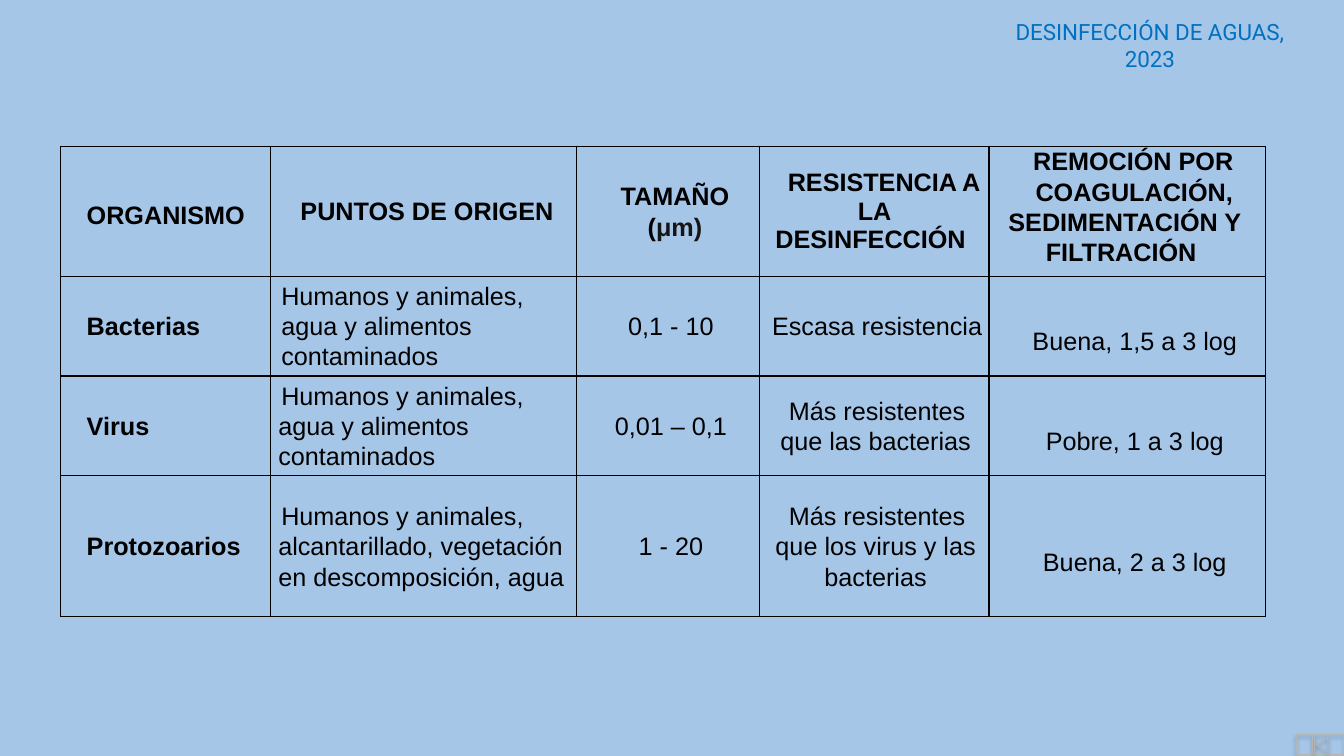
"""Build the slide that compares how organisms respond to water disinfection."""
import pptx
import pptx.dml.color
import pptx.enum.shapes
import pptx.enum.text
import pptx.oxml
import pptx.oxml.ns
import pptx.util

Inches = pptx.util.Inches
Pt = pptx.util.Pt
RGBColor = pptx.dml.color.RGBColor
ALIGN = pptx.enum.text.PP_ALIGN
ANCHOR = pptx.enum.text.MSO_ANCHOR

BACKGROUND = RGBColor(0xA6, 0xC6, 0xE8)
TITLE_BLUE = RGBColor(0x00, 0x70, 0xC0)
BLACK = RGBColor(0x00, 0x00, 0x00)
UNIT_BLACK = RGBColor(0x15, 0x15, 0x15)
BUTTON_GRAY = RGBColor(0xB5, 0xB5, 0xB5)

TITLE = "DESINFECCIÓN DE AGUAS, 2023"
HEADERS = [
    [[("ORGANISMO", BLACK)]],
    [[("PUNTOS DE ORIGEN ", BLACK)]],
    [[("TAMAÑO", BLACK)], [("(", BLACK), ("μm)", UNIT_BLACK)]],
    [[("RESISTENCIA A LA DESINFECCIÓN ", BLACK)]],
    [[("REMOCIÓN POR ", BLACK)], [("COAGULACIÓN, SEDIMENTACIÓN Y FILTRACIÓN ", BLACK)]],
]
ORGANISMS = [
    ("Bacterias", "Humanos y animales, agua y alimentos contaminados", "0,1 - 10",
     "Escasa resistencia", "Buena, 1,5 a 3 log "),
    ("Virus", "Humanos y animales, agua y alimentos contaminados", "0,01 – 0,1",
     "Más resistentes que las bacterias", "Pobre, 1 a 3 log "),
    ("Protozoarios", "Humanos y animales, alcantarillado, vegetación en descomposición, agua",
     "1 - 20", "Más resistentes que los virus y las bacterias", "Buena, 2 a 3 log "),
]
COLUMN_WIDTHS = [2.08, 3.04, 1.81, 2.28, 2.74]
ROW_HEIGHTS = [1.29, 0.99, 0.99, 1.4]
HEADER_INDENTS = [[(0.07, 0.19)], [(0, 0.19)], [(0, 0.19)] * 2, [(0.05, 0.19)],
                  [(0.05, 0.19), (0, 0.19)]]
BODY_INDENTS = [(0.07, 0.19), (0.08, 0.03), (0.08, 0.03), (0.08, 0.03), (0.08, 0.19)]
BACTERIA_INDENTS = [(0.07, 0.19), (0.11, 0), (0.11, 0), (0.08, 0.03), (0.08, 0.19)]
NAMESPACE = pptx.oxml.ns.nsdecls("a")


def write_text(paragraph, text, *, size=18, font="Arial", color=BLACK, bold=False,
               align=ALIGN.CENTER, indent=(0, 0), spacing=1.07, after=0.2):
    """Add one formatted run to a paragraph."""
    properties = paragraph._p.get_or_add_pPr()
    properties.set("marL", str(Inches(indent[0])))
    properties.set("indent", str(Inches(indent[1])))
    paragraph.alignment = align
    paragraph.line_spacing = spacing
    paragraph.space_after = Pt(after)
    run = paragraph.add_run()
    run.text = text
    run.font.name = font
    run.font.size = Pt(size)
    run.font.bold = bold
    run.font.color.rgb = color


def format_cell(cell, *, top=0, anchor=ANCHOR.MIDDLE):
    """Set the borders, insets and anchor of a table cell."""
    properties = cell._tc.get_or_add_tcPr()
    for side in "LRTB":
        properties.append(pptx.oxml.parse_xml(
            f'<a:ln{side} {NAMESPACE} w="{Pt(1)}"><a:solidFill>'
            f'<a:srgbClr val="{BLACK}"/></a:solidFill></a:ln{side}>'))
    cell.fill.background()
    cell.margin_left = cell.margin_bottom = 0
    cell.margin_right = Inches(0.05)
    cell.margin_top = Inches(top)
    cell.vertical_anchor = anchor


def add_title(slide):
    """Place the heading in the top right corner."""
    title = slide.shapes.title
    title.left, title.top = Inches(9.82), Inches(0.13)
    title.width, title.height = Inches(3.17), Inches(0.37)
    frame = title.text_frame
    frame.word_wrap = True
    frame.auto_size = pptx.enum.text.MSO_AUTO_SIZE.SHAPE_TO_FIT_TEXT
    frame.vertical_anchor = ANCHOR.TOP
    write_text(frame.paragraphs[0], TITLE, size=16, font="Roboto", color=TITLE_BLUE,
               spacing=1.0, after=0)


def add_organism_table(slide):
    """Add the table of organisms."""
    table = slide.shapes.add_table(
        len(ROW_HEIGHTS), len(COLUMN_WIDTHS), Inches(0.6), Inches(1.45),
        Inches(sum(COLUMN_WIDTHS)), Inches(sum(ROW_HEIGHTS))).table
    table.first_row = table.horz_banding = False
    for column, width in zip(table.columns, COLUMN_WIDTHS):
        column.width = Inches(width)
    for row, height in zip(table.rows, ROW_HEIGHTS):
        row.height = Inches(height)

    last = len(COLUMN_WIDTHS) - 1
    for column, (lines, indents) in enumerate(zip(HEADERS, HEADER_INDENTS)):
        cell = table.cell(0, column)
        format_cell(cell, top=0.07 if column == 0 else 0,
                    anchor=ANCHOR.TOP if column == last else ANCHOR.MIDDLE)
        for number, (line, indent) in enumerate(zip(lines, indents)):
            frame = cell.text_frame
            paragraph = frame.add_paragraph() if number else frame.paragraphs[0]
            for text, color in line:
                write_text(paragraph, text, color=color, bold=True, indent=indent,
                           align=ALIGN.LEFT if column == 0 else ALIGN.CENTER,
                           spacing=1.02 if column == 3 else 1.07)

    for row, organism in enumerate(ORGANISMS, start=1):
        indents = BACTERIA_INDENTS if row == 1 else BODY_INDENTS
        for column, (text, indent) in enumerate(zip(organism, indents)):
            cell = table.cell(row, column)
            format_cell(cell, top=0.3 if column == last else 0)
            write_text(cell.text_frame.paragraphs[0], text, bold=column == 0, indent=indent,
                       align=ALIGN.LEFT if column < 2 else ALIGN.CENTER)


def add_back_button(slide):
    """Add the outlined navigation button in the bottom right corner."""
    button = slide.shapes.add_shape(
        pptx.enum.shapes.MSO_SHAPE.ACTION_BUTTON_BEGINNING,
        Inches(12.86), Inches(7.29), Inches(0.47), Inches(0.2))
    button.fill.background()
    button.line.color.rgb = BUTTON_GRAY
    button.line.width = Pt(0.75)
    button.shadow.inherit = False
    effects = button._element.spPr.find(pptx.oxml.ns.qn("a:effectLst"))
    effects.append(pptx.oxml.parse_xml(
        f'<a:outerShdw {NAMESPACE} blurRad="{Pt(3.1)}" dist="{Pt(1.6)}" dir="5400000" '
        f'rotWithShape="0"><a:srgbClr val="{BLACK}"><a:alpha val="38000"/></a:srgbClr>'
        '</a:outerShdw>'))


def main():
    """Create and save the presentation."""
    presentation = pptx.Presentation()
    presentation.slide_width, presentation.slide_height = Inches(13.33), Inches(7.5)
    slide = presentation.slides.add_slide(presentation.slide_layouts[5])
    slide.background.fill.solid()
    slide.background.fill.fore_color.rgb = BACKGROUND
    add_back_button(slide)
    add_title(slide)
    add_organism_table(slide)
    presentation.save("out.pptx")


if __name__ == "__main__":
    main()
